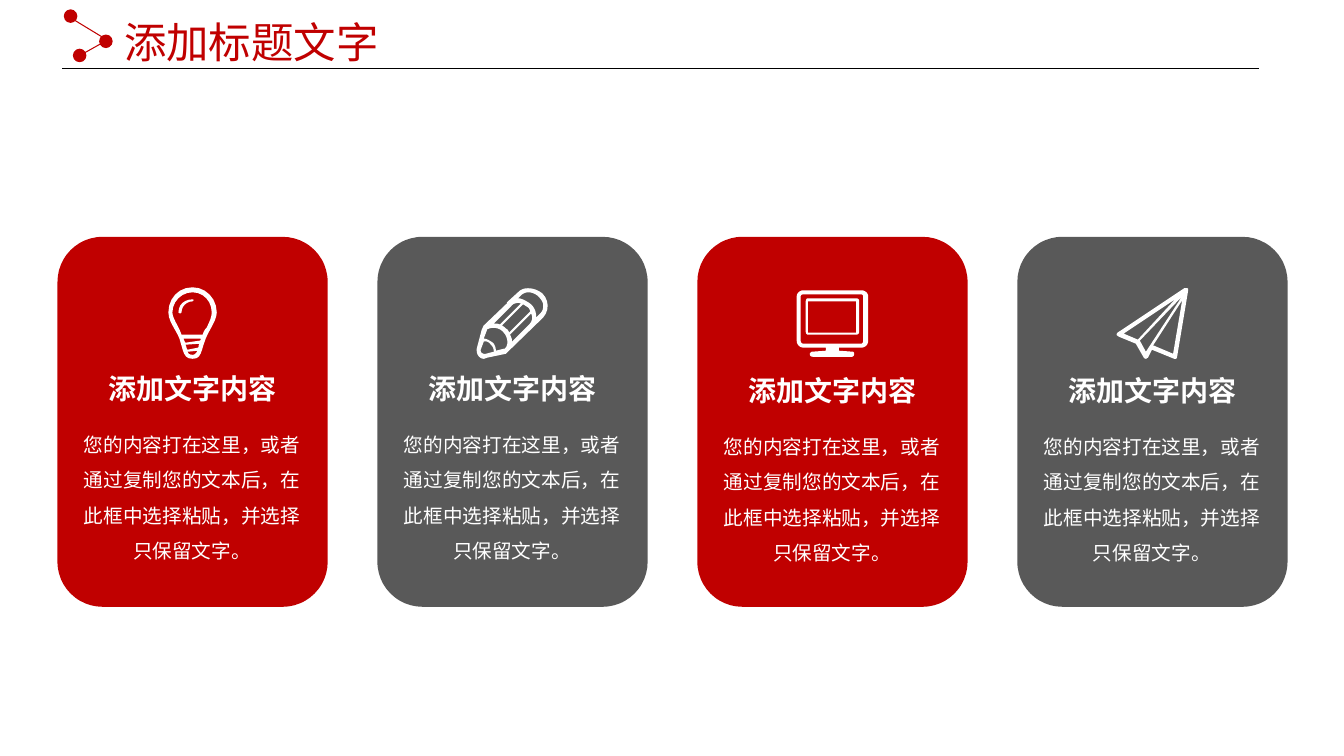
from lxml.etree import SubElement
from pptx import Presentation
from pptx.dml.color import RGBColor
from pptx.enum.shapes import MSO_CONNECTOR, MSO_SHAPE
from pptx.enum.text import MSO_ANCHOR, MSO_AUTO_SIZE, PP_ALIGN
from pptx.oxml.ns import qn
from pptx.util import Inches, Pt

RED = RGBColor(0xC0, 0x00, 0x00)
GRAY = RGBColor(0x59, 0x59, 0x59)
BLACK = RGBColor(0x00, 0x00, 0x00)
WHITE = RGBColor(0xFF, 0xFF, 0xFF)
FONT = "Noto Sans CJK SC"

FIRST_CARD, LAST_CARD = 0.57, 10.09
CARD_TOP, CARD_WIDTH, CARD_HEIGHT = 2.35, 2.68, 3.67
DOT = 0.12
CURVE_STEPS = 6
HEADING = "添加文字内容"
BODY = "您的内容打在这里，或者通过复制您的文本后，在此框中选择粘贴，并选择只保留文字。"

BULB = """
M 34 47 L 13 47 C 12 44 11 42 10 40 C 7 34 4 29 4 25 C 4 14 13 5 24 5
C 35 5 43 14 43 25 C 43 29 41 34 38 40 C 36 42 35 44 34 47
M 24 67 C 21 67 20 66 19 64 L 29 63 C 27 66 26 67 24 67
M 17 55 C 16 54 16 53 15 51 L 32 51 C 32 52 32 53 31 53
M 29 60 L 19 62 C 18 61 18 59 17 57 L 31 56 C 31 56 30 57 30 58 C 30 59 30 60 29 60
M 24 0 C 10 0 0 11 0 25 C 0 34 8 43 11 51 C 15 64 15 71 24 71
C 33 71 32 64 37 51 C 40 43 48 33 48 25 C 48 11 37 0 24 0
M 24 12 C 16 12 10 17 10 25 C 10 25 11 26 12 26 C 12 26 13 25 13 25
C 13 19 18 14 24 14 C 24 14 25 13 25 13 C 25 12 24 12 24 12
"""
PENCIL = """
M 63 25 L 59 29 L 59 28 C 59 23 57 19 54 16 C 50 13 45 10 41 10 L 44 7
C 46 5 49 4 51 4 C 55 4 59 6 61 8 C 64 11 66 14 66 17 C 66 21 65 23 63 25
M 19 62 C 19 59 18 56 16 54 C 13 52 10 50 7 50 L 10 42 L 10 41
C 15 38 22 39 26 43 C 31 48 32 56 28 60 L 27 60
M 9 65 L 7 65 C 6 65 4 64 4 62 L 4 61 L 7 53 C 9 52 12 53 14 56 C 16 58 17 60 17 63
M 23 36 C 21 35 19 35 17 35 L 34 18 C 36 15 40 14 44 15
M 32 44 C 32 43 31 41 29 40 C 28 39 27 38 25 37 L 46 16
C 48 17 49 18 51 19 C 52 20 53 22 53 23
M 35 52 C 35 50 34 48 33 46 L 54 25 C 56 29 55 33 52 36 L 35 53
M 65 5 C 61 2 56 0 51 0 C 47 0 44 1 41 4 L 30 14 L 30 15 L 7 37
C 6 38 6 40 5 41 L 0 60 L 0 62 C 0 66 3 70 7 70 C 8 70 10 69 10 69
L 29 65 C 30 64 31 63 32 62 L 66 29 C 72 22 72 12 65 5
"""
MONITOR = """
M 59 42 L 11 42 L 11 11 L 59 11
M 59 8 L 11 8 C 10 8 9 9 9 11 L 9 41 C 9 43 10 44 11 44
L 59 44 C 61 44 62 43 62 41 L 62 11 C 62 9 61 8 59 8
M 66 50 C 66 52 65 53 64 53 L 7 53 C 5 53 4 52 4 50 L 4 6
C 4 5 5 4 7 4 L 64 4 C 65 4 66 5 66 6
M 64 0 L 7 0 C 3 0 0 3 0 6 L 0 50 C 0 54 3 57 7 57 L 29 57 L 29 60 L 15 61
C 14 62 13 62 13 63 C 13 65 14 66 16 66 L 55 66 C 56 66 57 65 57 63
C 57 62 57 62 56 61 L 42 60 L 42 57 L 64 57 C 68 57 71 54 71 50
L 71 6 C 71 3 68 0 64 0
"""
PLANE = """
M 56 65 L 37 57 L 36 57 L 65 12
M 23 52 L 65 8 L 29 63
M 7 45 L 58 11 L 21 51
M 70 0 L 67 0 L 1 44 C 1 44 0 45 0 46 C 0 47 1 47 2 48 L 19 55 L 27 69
C 27 69 28 70 29 70 C 30 70 30 69 31 69 L 35 61 L 57 70 L 59 70
C 59 70 60 69 60 68 L 71 2 C 71 1 71 0 70 0
"""

CARDS = [
    (RED, BULB, 0.48, 2.85, 3.64),
    (GRAY, PENCIL, 0.71, 2.86, 3.64),
    (RED, MONITOR, 0.71, 2.88, 3.66),
    (GRAY, PLANE, 0.71, 2.86, 3.66),
]


def write_text(box, text, size, color, bold=False, align=PP_ALIGN.CENTER, spacing=1.0, wrap=True):
    frame = box.text_frame
    frame.word_wrap = wrap
    frame.auto_size = MSO_AUTO_SIZE.NONE
    frame.vertical_anchor = MSO_ANCHOR.TOP
    frame.text = text
    para = frame.paragraphs[0]
    para.alignment = align
    para.line_spacing = spacing
    para.font.size = Pt(size)
    para.font.bold = bold
    para.font.color.rgb = color
    para.font.name = FONT
    defaults = para._p.pPr.find(qn("a:defRPr"))
    SubElement(defaults, qn("a:ea")).set("typeface", FONT)


def add_text(page, left, top, width, height, text, size, **style):
    box = page.shapes.add_textbox(Inches(left), Inches(top), Inches(width), Inches(height))
    write_text(box, text, size, WHITE, **style)


def add_filled(page, kind, left, top, width, height, color):
    shape = page.shapes.add_shape(kind, Inches(left), Inches(top), Inches(width), Inches(height))
    shape.shadow.inherit = False
    shape.fill.solid()
    shape.fill.fore_color.rgb = color
    shape.line.fill.background()
    return shape


def add_line(page, start, end, color, weight):
    ends = [Inches(value) for value in (*start, *end)]
    line = page.shapes.add_connector(MSO_CONNECTOR.STRAIGHT, *ends)
    line.line.color.rgb = color
    line.line.width = Pt(weight)
    SubElement(line._element.spPr, qn("a:effectLst"))


def curve_points(start, first, second, end):
    for step in range(1, CURVE_STEPS + 1):
        t = step / CURVE_STEPS
        weights = ((1 - t) ** 3, 3 * t * (1 - t) ** 2, 3 * t ** 2 * (1 - t), t ** 3)
        yield tuple(
            sum(weight * value for weight, value in zip(weights, axis))
            for axis in zip(start, first, second, end)
        )


def read_contours(outline):
    tokens = iter(outline.split())

    def point():
        return int(next(tokens)), int(next(tokens))

    contours = []
    for command in tokens:
        if command == "M":
            contours.append([point()])
        elif command == "L":
            contours[-1].append(point())
        else:
            contours[-1].extend(curve_points(contours[-1][-1], point(), point(), point()))
    return contours


def add_icon(page, outline, left, top):
    contours = [
        [(Inches(x / 100), Inches(y / 100)) for x, y in contour]
        for contour in read_contours(outline)
    ]
    builder = page.shapes.build_freeform(*contours[0][0])
    for index, contour in enumerate(contours):
        if index:
            builder.move_to(*contour[0])
        builder.add_line_segments(contour[1:], close=True)
    icon = builder.convert_to_shape(Inches(left), Inches(top))
    icon.shadow.inherit = False
    icon.fill.solid()
    icon.fill.fore_color.rgb = WHITE
    icon.line.fill.background()


def add_header(page):
    title = page.shapes.title
    title.left, title.top = Inches(1.13), Inches(0.01)
    title.width, title.height = Inches(3), Inches(0.71)
    write_text(title, "添加标题文字", 30.3, RED, align=PP_ALIGN.LEFT, spacing=1.2)
    add_line(page, (0.62, 0.68), (12.49, 0.68), BLACK, 0.5)
    for left, top in ((0.64, 0.1), (0.73, 0.49), (0.99, 0.35)):
        dot = add_filled(page, MSO_SHAPE.OVAL, left, top, DOT, DOT, RED)
        dot.line.color.rgb = RED
        dot.line.width = Pt(1)
    add_line(page, (0.64, 0.14), (1.1, 0.42), RED, 0.75)
    add_line(page, (0.74, 0.58), (1.06, 0.4), RED, 0.75)


def add_card(page, left, color, outline, icon_width, icon_top, heading_top):
    center = left + CARD_WIDTH / 2
    add_filled(page, MSO_SHAPE.ROUNDED_RECTANGLE, left, CARD_TOP, CARD_WIDTH, CARD_HEIGHT, color)
    add_text(page, center - 0.94, heading_top, 1.88, 0.44, HEADING, 20, bold=True, wrap=False)
    add_text(page, center - 1.25, heading_top + 0.49, 2.49, 1.51, BODY, 14, spacing=1.5)
    add_icon(page, outline, center - icon_width / 2, icon_top)


def main():
    deck = Presentation()
    deck.slide_width, deck.slide_height = Inches(13.33), Inches(7.5)
    page = deck.slides.add_slide(deck.slide_layouts[5])
    add_header(page)
    pitch = (LAST_CARD - FIRST_CARD) / (len(CARDS) - 1)
    for index, card in enumerate(CARDS):
        add_card(page, FIRST_CARD + index * pitch, *card)
    deck.save("out.pptx")


if __name__ == "__main__":
    main()
